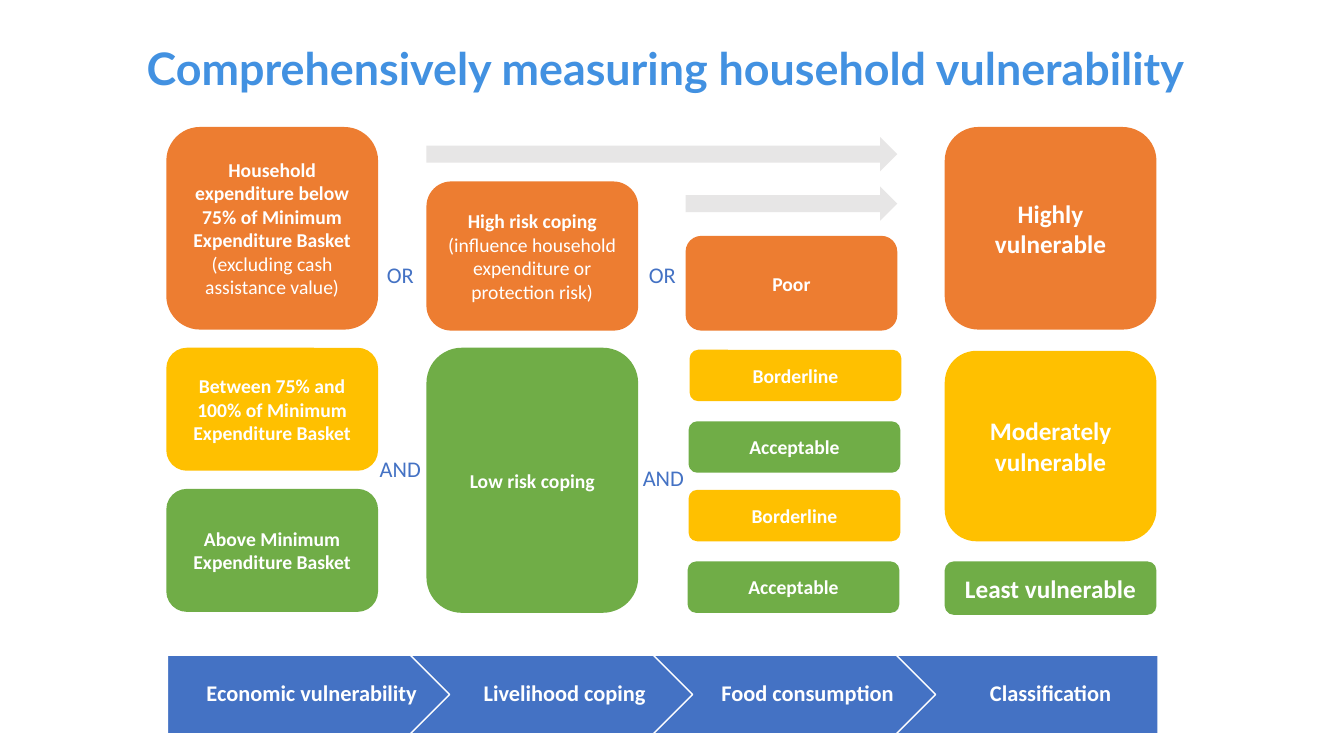
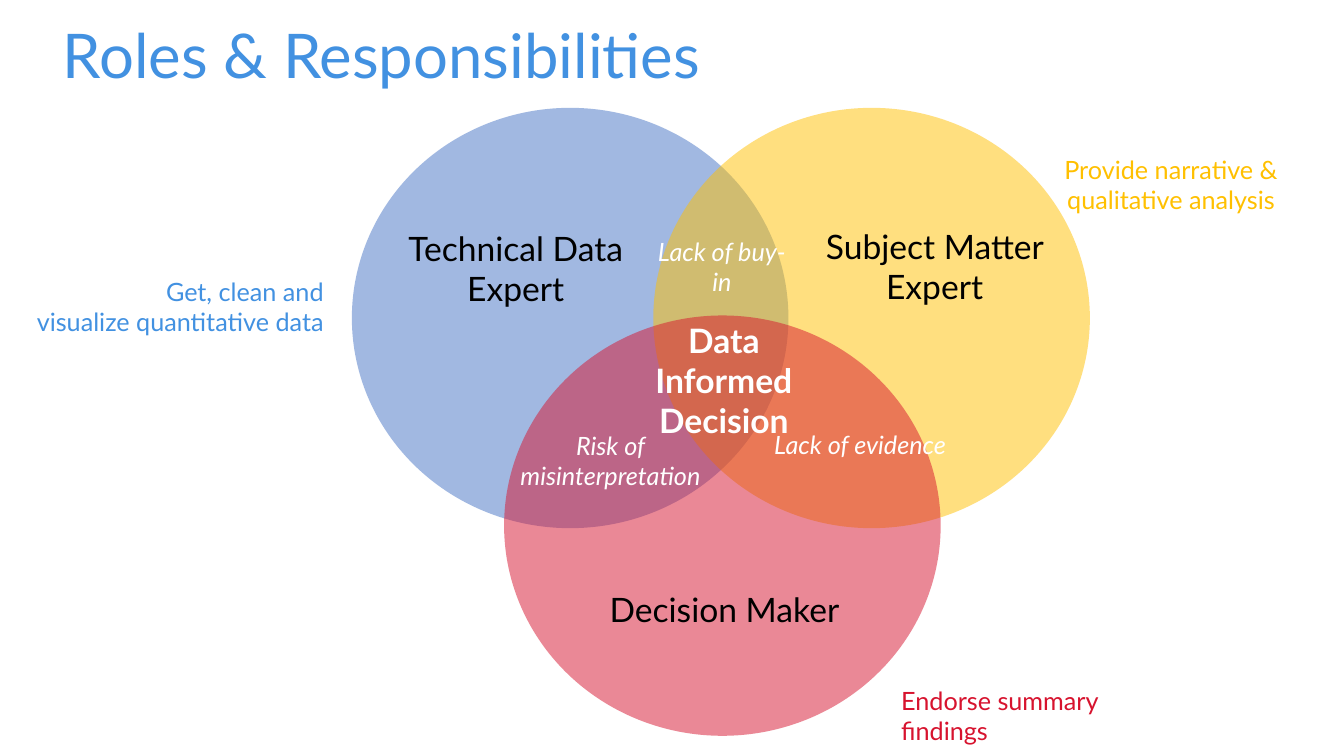
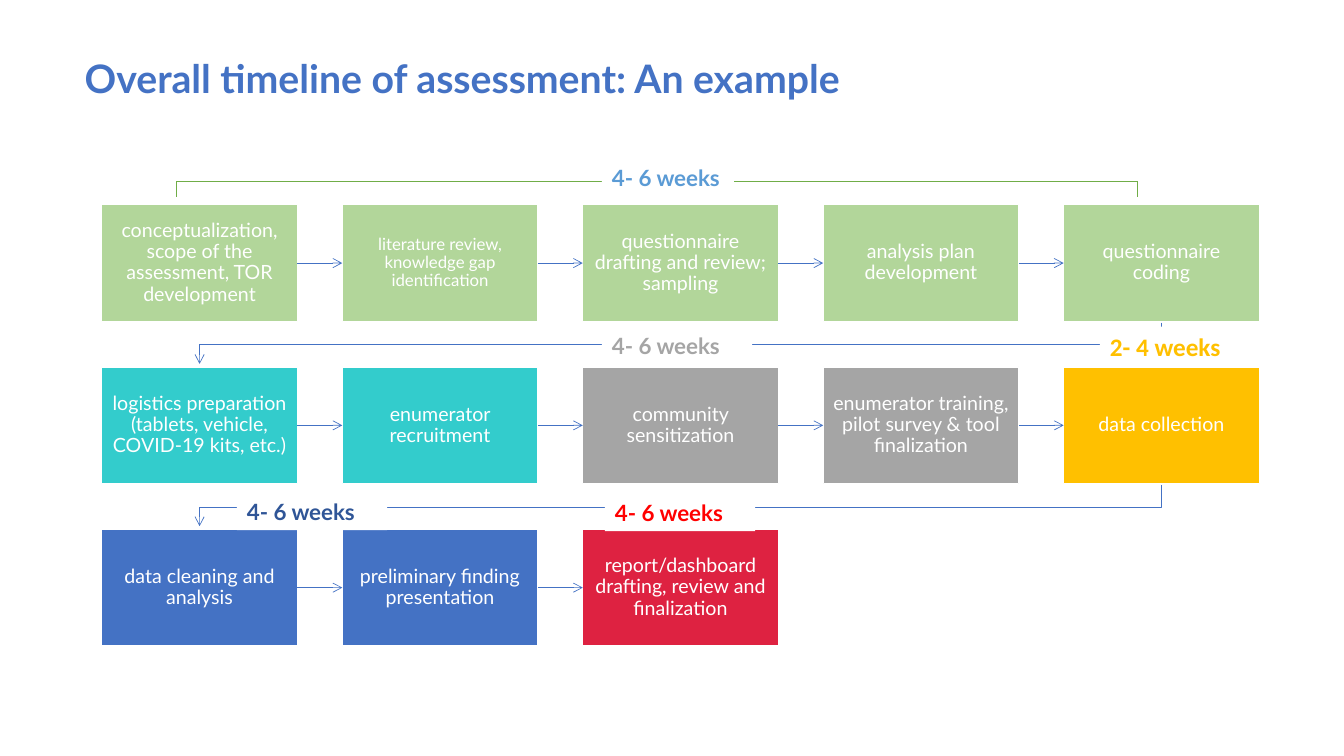
"""Build three slides on household vulnerability, team roles and an assessment timeline."""
from pptx import Presentation
from pptx.dml.color import RGBColor
from pptx.enum.shapes import MSO_CONNECTOR, MSO_SHAPE
from pptx.enum.text import MSO_ANCHOR, MSO_AUTO_SIZE, PP_ALIGN
from pptx.oxml.xmlchemy import OxmlElement
from pptx.util import Inches, Pt

LEFT, CENTER, RIGHT = PP_ALIGN.LEFT, PP_ALIGN.CENTER, PP_ALIGN.RIGHT
TOP, MIDDLE = MSO_ANCHOR.TOP, MSO_ANCHOR.MIDDLE
RECTANGLE, ROUNDED, OVAL = MSO_SHAPE.RECTANGLE, MSO_SHAPE.ROUNDED_RECTANGLE, MSO_SHAPE.OVAL
ARROW, PENTAGON, CHEVRON = MSO_SHAPE.RIGHT_ARROW, MSO_SHAPE.PENTAGON, MSO_SHAPE.CHEVRON
STRAIGHT = MSO_CONNECTOR.STRAIGHT

WHITE, BLACK, BLUE, SKY = "FFFFFF", "000000", "4472C4", "4291E1"
ORANGE, YELLOW, GREEN, RED = "ED7D31", "FFC000", "70AD47", "D7132E"
PALE_GREEN, TEAL, GRAY, CRIMSON = "B2D69A", "33CCCC", "A5A5A5", "DE2241"
TITLE = {"font": "Lato", "spacing": 0.9}


def write(shape, text, size, color, font="Calibri", bold=False, italic=False, plain="",
          align=CENTER, anchor=MIDDLE, spacing=1.0, margins=(0.1, 0.05, 0.1, 0.05)):
    """Fill a shape with one paragraph per line of text, then an optional regular run."""
    frame = shape.text_frame
    frame_values = {"word_wrap": True, "auto_size": MSO_AUTO_SIZE.NONE, "vertical_anchor": anchor}
    for side, margin in zip(("left", "top", "right", "bottom"), margins):
        frame_values[f"margin_{side}"] = Inches(margin)
    for name, value in frame_values.items():
        setattr(frame, name, value)
    frame.text = text
    if plain:
        frame.paragraphs[-1].add_run().text = plain
    for paragraph in frame.paragraphs:
        paragraph.alignment = align
        paragraph.line_spacing = spacing
        for index, run in enumerate(paragraph.runs):
            font_values = {"name": font, "size": Pt(size), "bold": bold and index == 0, "italic": italic}
            for name, value in font_values.items():
                setattr(run.font, name, value)
            run.font.color.rgb = RGBColor.from_string(color)


def add_box(slide, preset, box, fill, line=None):
    """Add a flat preset shape with a fill and an optional outline."""
    shape = slide.shapes.add_shape(preset, *map(Inches, box))
    shape.shadow.inherit = False
    shape.fill.solid()
    shape.fill.fore_color.rgb = RGBColor.from_string(fill)
    if line:
        shape.line.color.rgb = RGBColor.from_string(line)
        shape.line.width = Pt(1)
    else:
        shape.line.fill.background()
    return shape


presentation = Presentation()
presentation.slide_width = Inches(13.33)
presentation.slide_height = Inches(7.5)

slides = []
for text, box, values in [
    ("Comprehensively measuring household vulnerability", (0.38, 0.32, 12.45, 0.76),
     {"size": 32, "color": SKY, "bold": True}),
    ("Roles & Responsibilities", (0.52, 0.26, 9.57, 0.65),
     {"size": 44, "color": SKY, "align": LEFT}),
    ("Overall timeline of assessment: An example", (0.74, 0.49, 12, 0.57),
     {"size": 28, "color": BLUE, "bold": True, "align": LEFT, "spacing": 1.0}),
]:
    slide = presentation.slides.add_slide(presentation.slide_layouts[5])
    title = slide.shapes.title
    title.left, title.top, title.width, title.height = map(Inches, box)
    write(title, text, **{**TITLE, **values})
    slides.append(slide)
vulnerability_slide, roles_slide, timeline_slide = slides

ECONOMIC, COPING, FOOD, CLASS = 1.65, 4.23, 6.8, 9.37
CARD_WIDTH = 2.1
for left, top, height, fill, size, text, plain in [
    (ECONOMIC, 1.26, 2.01, ORANGE, 14, "Household expenditure below 75% of Minimum Expenditure Basket ",
     "(excluding cash assistance value)"),
    (ECONOMIC, 3.45, 1.22, YELLOW, 14, "Between 75% and 100% of Minimum Expenditure Basket", ""),
    (ECONOMIC, 4.85, 1.22, GREEN, 14, "Above Minimum Expenditure Basket", ""),
    (COPING, 1.8, 1.48, ORANGE, 14, "High risk coping ",
     "(influence household expenditure or protection risk)"),
    (COPING, 3.45, 2.63, GREEN, 14, "Low risk coping", ""),
    (FOOD, 2.34, 0.94, ORANGE, 14, "Poor", ""),
    (FOOD + 0.04, 3.47, 0.51, YELLOW, 14, "Borderline", ""),
    (FOOD + 0.03, 4.18, 0.51, GREEN, 14, "Acceptable", ""),
    (FOOD + 0.03, 4.86, 0.51, YELLOW, 14, "Borderline", ""),
    (FOOD + 0.02, 5.57, 0.51, GREEN, 14, "Acceptable", ""),
    (CLASS, 1.26, 2.01, ORANGE, 18, "Highly vulnerable", ""),
    (CLASS, 3.48, 1.89, YELLOW, 18, "Moderately vulnerable", ""),
    (CLASS, 5.57, 0.53, GREEN, 18, "Least vulnerable", ""),
]:
    card = add_box(vulnerability_slide, ROUNDED, (left, top, CARD_WIDTH, height), fill)
    write(card, text, size, WHITE, bold=True, plain=plain)

for left, top in [(COPING, 1.36), (FOOD, 1.85)]:
    add_box(vulnerability_slide, ARROW, (left, top, FOOD + CARD_WIDTH - left, 0.34), "E7E6E6")

for text, left, top, width in [
    ("OR", 3.71, 2.54, 0.52), ("OR", 6.31, 2.54, 0.52),
    ("AND", 3.64, 4.47, 0.66), ("AND", 6.25, 4.56, 0.66),
]:
    label = vulnerability_slide.shapes.add_textbox(*map(Inches, (left, top, width, 0.37)))
    write(label, text, 16, BLUE, anchor=TOP)

for index, text in enumerate(
        ["Economic vulnerability", "Livelihood coping", "Food consumption", "Classification"]):
    preset = CHEVRON if index else PENTAGON
    step = add_box(vulnerability_slide, preset, (1.66 + 2.41 * index, 6.5, 3.01, 0.78), BLUE, WHITE)
    write(step, text, 16, WHITE, bold=True, spacing=0.9, margins=(0.07, 0.05, 0.02, 0.05))
add_box(vulnerability_slide, RECTANGLE, (11.48, 6.31, 0.55, 1.18), WHITE)

for left, top, fill in [(3.49, 1.07, BLUE), (6.48, 1.07, YELLOW), (5, 3.13, RED)]:
    circle = add_box(roles_slide, OVAL, (left, top, 4.33, 4.17), fill)
    alpha = OxmlElement("a:alpha")
    alpha.set("val", "50000")
    circle.element.spPr.xpath("a:solidFill/a:srgbClr")[0].append(alpha)

ROLE = {"size": 24, "color": BLACK}
DECISION = {"size": 24, "color": WHITE, "bold": True}
RISK = {"size": 18, "color": WHITE, "italic": True}
for text, box, values in [
    ("Technical Data Expert", (3.9, 2.21, 2.43, 0.91), ROLE),
    ("Subject Matter Expert", (7.95, 2.19, 2.64, 0.91), ROLE),
    ("Decision Maker", (5.53, 5.79, 3.31, 0.5), ROLE),
    ("Data Informed Decision", (6.05, 3.12, 2.26, 1.31), DECISION),
    ("Risk of misinterpretation", (4.82, 4.22, 2.47, 0.71), RISK),
    ("Lack of evidence", (7.54, 4.21, 1.98, 0.4), RISK),
    ("Lack of buy-in", (6.42, 2.29, 1.48, 0.71), RISK),
    ("Get, clean and\nvisualize quantitative data", (0.05, 2.69, 3.26, 0.71),
     {"size": 18, "color": SKY, "align": RIGHT}),
    ("Provide narrative &\nqualitative analysis", (10.38, 1.48, 2.47, 0.71),
     {"size": 18, "color": YELLOW}),
    ("Endorse summary\nfindings", (8.84, 6.75, 2.37, 0.71),
     {"size": 18, "color": RED, "align": LEFT}),
]:
    label = roles_slide.shapes.add_textbox(*map(Inches, box))
    write(label, text, font="Lato", anchor=TOP, **values)

ROWS = [
    [("conceptualization, scope of the assessment, TOR development", PALE_GREEN),
     ("literature review, knowledge gap identification", PALE_GREEN),
     ("questionnaire drafting and review; sampling", PALE_GREEN),
     ("analysis plan development", PALE_GREEN),
     ("questionnaire coding", PALE_GREEN)],
    [("logistics preparation (tablets, vehicle, COVID-19 kits, etc.)", TEAL),
     ("enumerator recruitment", TEAL),
     ("community sensitization", GRAY),
     ("enumerator training, pilot survey & tool finalization", GRAY),
     ("data collection", YELLOW)],
    [("data cleaning and analysis", BLUE),
     ("preliminary finding presentation", BLUE),
     ("report/dashboard drafting, review and finalization", CRIMSON)],
]
lines = []
arrows = []
for row, tasks in enumerate(ROWS):
    top = 2.03 + 1.61 * row
    previous = None
    for column, (text, fill) in enumerate(tasks):
        left = 1.01 + 2.385 * column
        task = add_box(timeline_slide, RECTANGLE, (left, top, 1.94, 1.16), fill, WHITE)
        size = 12 if text.startswith("literature") else 14
        write(task, text, size, WHITE, "Lato", spacing=0.9, margins=(0.1, 0.1, 0.1, 0.1))
        if previous:
            arrow = timeline_slide.shapes.add_connector(STRAIGHT, 0, 0, 0, 0)
            arrow.begin_connect(previous, 3)
            arrow.end_connect(task, 1)
            lines.append((arrow, BLUE))
            arrows.append(arrow)
        previous = task
    if row < len(ROWS) - 1:
        points = [(11.52, top + 1.17), (11.52, top + 1.39), (1.98, top + 1.39), (1.98, top + 1.58)]
        points = [(Inches(x), Inches(y)) for x, y in points]
        builder = timeline_slide.shapes.build_freeform(*points[0])
        builder.add_line_segments(points[1:], close=False)
        return_arrow = builder.convert_to_shape()
        return_arrow.fill.background()
        lines.append((return_arrow, BLUE))
        arrows.append(return_arrow)

for ends in [(1.75, 1.8, 11.28, 1.8), (1.75, 1.8, 1.75, 1.95), (11.28, 1.8, 11.28, 1.95)]:
    lines.append((timeline_slide.shapes.add_connector(STRAIGHT, *map(Inches, ends)), GREEN))

for line_shape, color in lines:
    line_shape.line.color.rgb = RGBColor.from_string(color)
    line_shape.line.width = Pt(0.5)
    line_shape.element.spPr.append(OxmlElement("a:effectLst"))
for arrow in arrows:
    tail = OxmlElement("a:tailEnd")
    tail.set("type", "arrow")
    arrow.element.spPr.get_or_add_ln().append(tail)

for text, box, size, color, font in [
    ("4- 6 weeks", (5.97, 1.58, 1.31, 0.37), 16, "5B9BD5", "Lato"),
    ("4- 6 weeks", (5.97, 3.25, 1.49, 0.37), 16, GRAY, "Lato"),
    ("2- 4 weeks", (10.91, 3.24, 1.79, 0.4), 18, YELLOW, "Calibri"),
    ("4- 6 weeks", (2.35, 4.89, 1.49, 0.37), 16, "2F5597", "Lato"),
    ("4- 6 weeks", (6, 4.9, 1.49, 0.37), 16, "FF0000", "Lato"),
]:
    duration = add_box(timeline_slide, RECTANGLE, box, WHITE)
    write(duration, text, size, color, font, bold=True, align=LEFT, anchor=TOP)

presentation.save("out.pptx")
